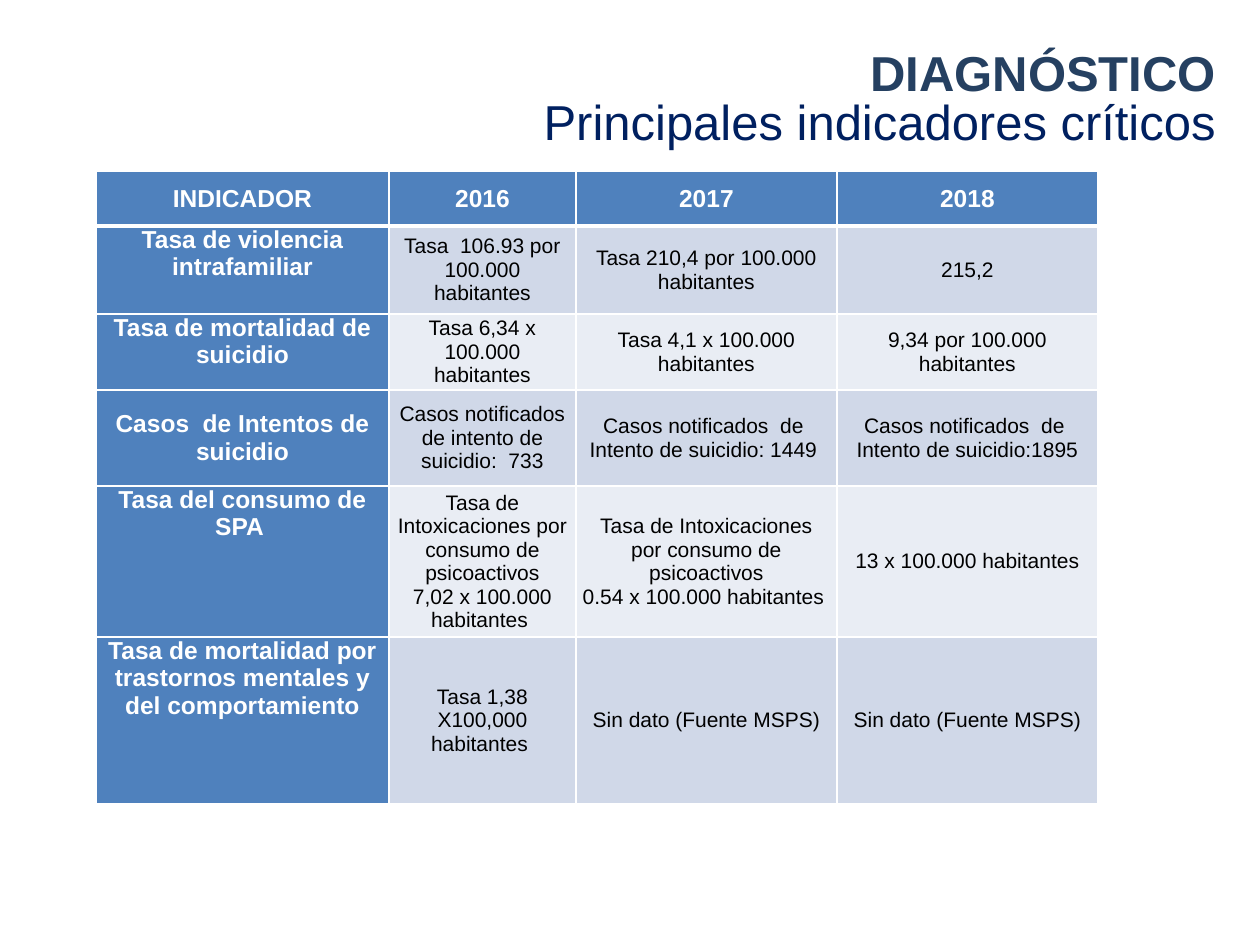
from pptx import Presentation
from pptx import util as u
from pptx.dml.color import RGBColor
from pptx.enum import text as t
from lxml import etree

PX = u.Inches(1) / 126
FONT = "Arial"
HUES = {"title": "254061", "sub": "002060", "head": "4F81BD", "odd": "D0D8E8",
        "even": "E9EDF4", "white": "FFFFFF", "black": "000000"}
NS = "http://schemas.openxmlformats.org/drawingml/2006/main"
MID, TOP = t.MSO_ANCHOR.MIDDLE, t.MSO_ANCHOR.TOP

COLS = [293, 187, 261, 261]
ROWS = [55, 88, 76, 96, 151, 167]
MIXED = "Tasa de Intoxicaciones por consumo de psicoactivos"
NONE = "Sin dato (Fuente MSPS)"
CASES = "Casos notificados  de "
# A line break inside a string starts a new paragraph
DATA = [
    ["INDICADOR", "2016", "2017", "2018"],
    ["Tasa de violencia intrafamiliar", "Tasa  106.93 por 100.000 habitantes",
     "Tasa 210,4 por 100.000 habitantes", "215,2"],
    ["Tasa de mortalidad de suicidio", "Tasa 6,34 x 100.000 habitantes",
     "Tasa 4,1 x 100.000 habitantes", "9,34 por 100.000 habitantes"],
    ["Casos  de Intentos de suicidio",
     "Casos notificados de intento de suicidio:  733",
     CASES + "\nIntento de suicidio: 1449 ",
     CASES + "\nIntento de suicidio:1895"],
    ["Tasa del consumo de SPA ", MIXED + "\n7,02 x 100.000 habitantes ",
     MIXED + "\n0.54 x 100.000 habitantes ", "13 x 100.000 habitantes"],
    ["Tasa de mortalidad por trastornos mentales y del comportamiento",
     "Tasa 1,38 X100,000 habitantes ", NONE, NONE],
]


def px(n):
    return u.Emu(round(n * PX))


def color(name):
    return RGBColor.from_string(HUES[name])


def write(frame, words, size, hue, bold=False, align=t.PP_ALIGN.CENTER):
    for i, line in enumerate(words.split("\n")):
        para = frame.add_paragraph() if i else frame.paragraphs[0]
        para.alignment = align
        run = para.add_run()
        run.text = line
        font = run.font
        font.name, font.size, font.bold = FONT, u.Pt(size), bold
        font.color.rgb = color(hue)


def label(slide, box, words, hue, wrap=True, **style):
    frame = slide.shapes.add_textbox(*map(px, box)).text_frame
    frame.word_wrap = wrap
    frame.vertical_anchor = MID
    write(frame, words, 28, hue, **style)


def border(cell, side, width):
    # Borders must come before the fill in the cell properties
    props = cell._tc.get_or_add_tcPr()
    line = etree.Element(f"{{{NS}}}ln{side}", w=str(u.Pt(width)))
    fill = etree.SubElement(line, f"{{{NS}}}solidFill")
    etree.SubElement(fill, f"{{{NS}}}srgbClr", val=HUES["white"])
    props.insert("LRTB".index(side), line)


def fill_cell(cell, row, col, words):
    head = row == 0 or col == 0
    cell.margin_left = cell.margin_right = u.Inches(0.05)
    cell.margin_top = cell.margin_bottom = 0
    # Row names sit at the top, except in the row of cases
    cell.vertical_anchor = TOP if col == 0 and row not in (0, 3) else MID
    cell.fill.solid()
    cell.fill.fore_color.rgb = color(
        "head" if head else "odd" if row % 2 else "even")
    for side in "LRTB":
        thick = (row, side) in ((0, "B"), (1, "T"))
        border(cell, side, 3 if thick else 1)
    write(cell.text_frame, words, 14 if head else 12,
          "white" if head else "black", head)


def grid(slide, left, top):
    table = slide.shapes.add_table(len(ROWS), len(COLS), px(left), px(top),
                                   px(sum(COLS)), px(sum(ROWS))).table
    for col, wide in zip(table.columns, COLS):
        col.width = px(wide)
    for row, tall in zip(table.rows, ROWS):
        row.height = px(tall)
    for r, line in enumerate(DATA):
        for c, words in enumerate(line):
            fill_cell(table.cell(r, c), r, c, words)


def main():
    deck = Presentation()
    deck.slide_width, deck.slide_height = px(1260), px(945)
    slide = deck.slides.add_slide(deck.slide_layouts[6])

    # Headings
    label(slide, (854, 36, 374, 72), "DIAGNÓSTICO", "title", wrap=False,
          bold=True, align=t.PP_ALIGN.RIGHT)
    label(slide, (485, 84, 789, 74), "Principales indicadores críticos", "sub")

    # Indicators by year
    grid(slide, 96, 171)
    deck.save("out.pptx")


if __name__ == "__main__":
    main()
